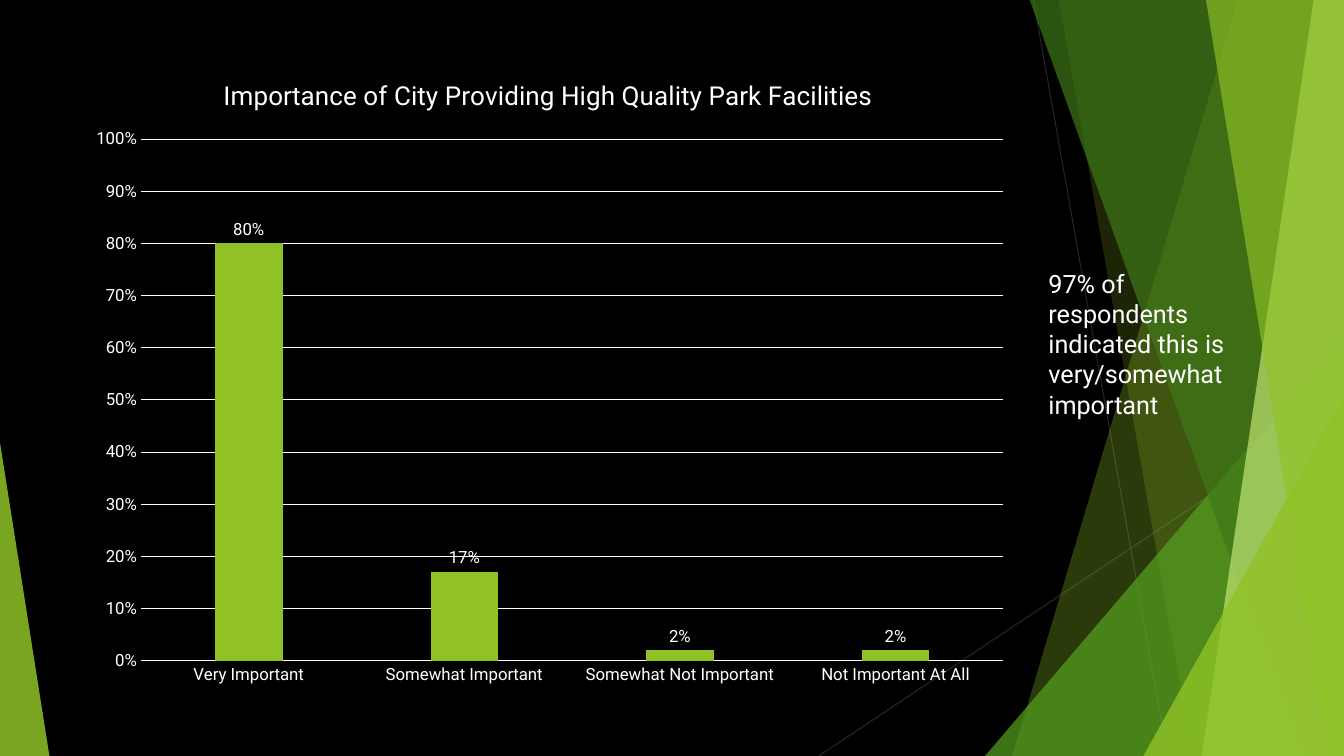
from lxml import etree
from pptx import Presentation
from pptx import util as u
from pptx.chart import data
from pptx.dml.color import RGBColor
from pptx.enum import chart as ch, shapes, text
from pptx.oxml import parse_xml
from pptx.oxml.ns import nsdecls, qn

COLORS = {"black": "000000", "white": "FFFFFF", "gray": "262626", "lime": "90C226",
          "leaf": "54A021", "moss": "3F7819", "pale": "C0E474"}
FONT = "Roboto"
WIDE, HIGH = 13.33, 7.5
TITLE = "Importance of City Providing High Quality Park Facilities"
RATINGS = {"Very Important": 0.8, "Somewhat Important": 0.17,
           "Somewhat Not Important": 0.02, "Not Important At All": 0.02}
NOTE = "97% of respondents indicated this is very/somewhat important"


def rgb(name):
    """Look up a colour by name."""
    return RGBColor.from_string(COLORS[name])


def style(font, size, color="white"):
    """Format a font."""
    font.name, font.size, font.bold = FONT, u.Pt(size), False
    font.color.rgb = rgb(color)


def write(frame, words, size=18, color="white"):
    """Put formatted text in a frame."""
    run = frame.paragraphs[0].add_run()
    run.text = words
    style(run.font, size, color)


def tint(shape, color, alpha):
    """Give a shape a see-through fill and no line."""
    shape.shadow.inherit = False
    shape.fill.solid()
    shape.fill.fore_color.rgb = rgb(color)
    shape.line.fill.background()
    node = shape._element.spPr.find(".//" + qn("a:srgbClr"))
    etree.SubElement(node, qn("a:alpha")).set("val", str(alpha * 1000))


def ray(slide, start, end):
    """Draw a thin background line."""
    ends = [u.Inches(n) for n in (*start, *end)]
    line = slide.shapes.add_connector(shapes.MSO_CONNECTOR.STRAIGHT, *ends)
    line.line.color.rgb = rgb("gray")
    line.line.width = u.Pt(0.75)
    etree.SubElement(line._element.spPr, qn("a:effectLst"))


def facet(slide, top, foot, color, alpha):
    """Draw a full-height band from a slanted edge to the right side."""
    points = [(top, -0.01), (WIDE, -0.01), (WIDE, HIGH), (foot, HIGH)]
    points = [(u.Inches(x), u.Inches(y)) for x, y in points]
    form = slide.shapes.build_freeform(*points[0])
    form.add_line_segments(points[1:], close=True)
    tint(form.convert_to_shape(), color, alpha)


def wedge(slide, left, top, width, peak, color, alpha):
    """Draw a right triangle that stands on the bottom edge."""
    box = [u.Inches(n) for n in (left, top, width, HIGH - top)]
    shape = slide.shapes.add_shape(shapes.MSO_SHAPE.ISOSCELES_TRIANGLE, *box)
    shape.adjustments[0] = peak
    tint(shape, color, alpha)


def decor(slide):
    """Lay out the green facets from back to front."""
    ray(slide, (10.25, 0), (11.58, HIGH))
    ray(slide, (WIDE, 4.03), (8.12, HIGH))
    facet(slide, 12.28, 10.04, "lime", 30)
    facet(slide, 10.5, 11.83, "lime", 20)
    wedge(slide, 9.77, 3.33, 3.56, 1, "leaf", 72)
    facet(slide, 10.21, 12.91, "moss", 70)
    facet(slide, 13.03, 11.92, "pale", 70)
    facet(slide, 11.96, 13.18, "lime", 65)
    wedge(slide, 11.34, 3.93, 1.99, 1, "lime", 80)
    wedge(slide, 0, 4.39, 0.49, 0, "lime", 85)


def place(chart, **box):
    """Fix the inner plot area as shares of the chart."""
    area = chart._chartSpace.chart.plotArea
    for old in area.findall(qn("c:layout")):
        area.remove(old)
    parts = "".join(f'<c:{key} val="{val}"/>' for key, val in box.items())
    area.insert(0, parse_xml(
        f'<c:layout {nsdecls("c")}><c:manualLayout><c:layoutTarget val="inner"/>'
        f'<c:xMode val="edge"/><c:yMode val="edge"/>{parts}</c:manualLayout></c:layout>'))


def rule(line):
    """Format a chart line."""
    line.color.rgb = rgb("white")
    line.width = u.Pt(0.75)


def columns(slide, box):
    """Chart the share of each rating."""
    table = data.CategoryChartData(number_format="0%")
    table.categories = list(RATINGS)
    table.add_series(TITLE, list(RATINGS.values()))
    frame = slide.shapes.add_chart(
        ch.XL_CHART_TYPE.COLUMN_CLUSTERED, *[u.Inches(n) for n in box], table)
    chart = frame.chart
    style(chart.font, 10)
    chart.has_legend = False
    chart.has_title = True
    write(chart.chart_title.text_frame, TITLE, 18.6)
    chart.chart_title.include_in_layout = False
    place(chart, x=0.07, y=0.13, w=0.91, h=0.81)

    cat, val = chart.category_axis, chart.value_axis
    for axis in (cat, val):
        axis.major_tick_mark = axis.minor_tick_mark = ch.XL_TICK_MARK.NONE
        style(axis.tick_labels.font, 12)
    rule(cat.format.line)
    val.format.line.fill.background()
    val.minimum_scale, val.maximum_scale, val.major_unit = 0, 1, 0.1
    val.has_major_gridlines = True
    rule(val.major_gridlines.format.line)
    val.tick_labels.number_format = "0%"
    val.tick_labels.number_format_is_linked = False

    plot = chart.plots[0]
    plot.gap_width, plot.overlap = 219, -27
    plot.vary_by_categories = False
    bars = plot.series[0]
    bars.format.fill.solid()
    bars.format.fill.fore_color.rgb = rgb("lime")
    labels = bars.data_labels
    labels.show_value = True
    labels.number_format, labels.number_format_is_linked = "0%", False
    labels.position = ch.XL_LABEL_POSITION.OUTSIDE_END
    style(labels.font, 12)


def aside(slide, box):
    """Write the finding beside the chart."""
    frame = slide.shapes.add_textbox(*[u.Inches(n) for n in box]).text_frame
    frame.word_wrap = True
    frame.auto_size = text.MSO_AUTO_SIZE.SHAPE_TO_FIT_TEXT
    write(frame, NOTE)


def main():
    """Build and save the slide."""
    deck = Presentation()
    deck.slide_width, deck.slide_height = u.Inches(WIDE), u.Inches(HIGH)
    slide = deck.slides.add_slide(deck.slide_layouts[6])
    slide.background.fill.solid()
    slide.background.fill.fore_color.rgb = rgb("black")
    decor(slide)
    columns(slide, (0.74, 0.55, 9.4, 6.39))
    aside(slide, (10.3, 2.61, 2.2, 1.62))
    deck.save("out.pptx")


if __name__ == "__main__":
    main()
